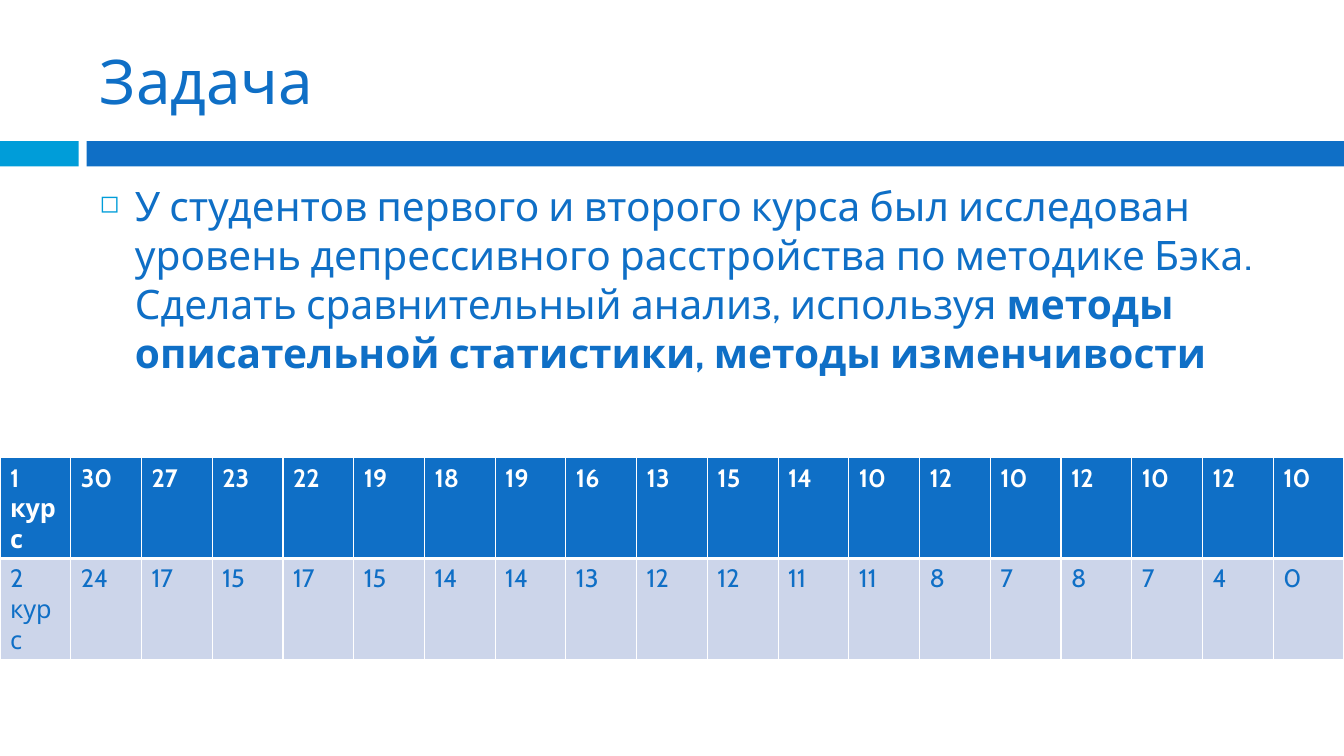
from lxml.etree import SubElement
from pptx import Presentation
from pptx.dml.color import RGBColor
from pptx.enum.shapes import MSO_SHAPE
from pptx.enum.text import MSO_ANCHOR, PP_ALIGN
from pptx.oxml.ns import qn
from pptx.util import Inches, Pt

FONT = "Cabin"
BLUE, CYAN, PALE, WHITE = "0F6FC6", "009DD9", "CCD5EA", "FFFFFF"
TITLE = "Задача"
TASK = [
    ("У студентов первого и второго курса был исследован уровень "
     "депрессивного расстройства по методике Бэка. "
     "Сделать сравнительный анализ, используя ", False),
    ("методы описательной статистики, методы изменчивости", True),
]
ROWS = [
    ("1 курс", 30, 27, 23, 22, 19, 18, 19, 16, 13, 15, 14, 10, 12, 10, 12, 10, 12, 10),
    ("2 курс", 24, 17, 15, 17, 15, 14, 14, 13, 12, 12, 11, 11, 8, 7, 8, 7, 4, 0),
]
LOOKS = [(BLUE, WHITE, True, 3), (PALE, BLUE, False, 1)]
BARS = [(0, 0.78, CYAN), (0.86, 12.47, BLUE)]
WIDE, HIGH = 13.33, 7.5
LEFT, SPAN = 0.89, 11.89


def paint(fill, color):
    fill.solid()
    fill.fore_color.rgb = RGBColor.from_string(color)


def write(par, text, size=18, color=BLUE, bold=False):
    run = par.add_run()
    run.text = text
    font = run.font
    font.name, font.size, font.bold = FONT, Pt(size), bold
    font.color.rgb = RGBColor.from_string(color)


def place(shape, *box):
    shape.left, shape.top, shape.width, shape.height = map(Inches, box)


def bullet(par, sign, color, scale):
    props = par._p.get_or_add_pPr()
    props.set("marL", str(Inches(0.35)))
    props.set("indent", str(-Inches(0.35)))
    tint = SubElement(props, qn("a:buClr"))
    SubElement(tint, qn("a:srgbClr"), val=color)
    SubElement(props, qn("a:buSzPct"), val=str(scale * 1000))
    SubElement(props, qn("a:buChar"), char=sign)


def edge(cell, side, width):
    props = cell._tc.get_or_add_tcPr()
    line = SubElement(props, qn("a:" + side), w=str(Pt(width)))
    fill = SubElement(line, qn("a:solidFill"))
    SubElement(fill, qn("a:srgbClr"), val=WHITE)


def main():
    deck = Presentation()
    deck.slide_width, deck.slide_height = Inches(WIDE), Inches(HIGH)
    slide = deck.slides.add_slide(deck.slide_layouts[5])
    shapes = slide.shapes

    for left, width, color in BARS:
        bar = shapes.add_shape(MSO_SHAPE.RECTANGLE, Inches(left), Inches(1.4),
                               Inches(width), Inches(0.25))
        paint(bar.fill, color)
        bar.line.fill.background()
        bar.shadow.inherit = False

    title = shapes.title
    place(title, LEFT, 0.25, SPAN, 1.08)
    title.text_frame.vertical_anchor = MSO_ANCHOR.MIDDLE
    head = title.text_frame.paragraphs[0]
    head.alignment = PP_ALIGN.LEFT
    write(head, TITLE, size=44)

    body = shapes.add_textbox(0, 0, 0, 0)
    place(body, LEFT, 1.75, SPAN, 2.31)
    body.text_frame.word_wrap = True
    par = body.text_frame.paragraphs[0]
    bullet(par, "◻", CYAN, 60)
    for text, bold in TASK:
        write(par, text, size=29, bold=bold)

    count = len(ROWS[0])
    table = shapes.add_table(len(ROWS), count, 0, Inches(4.54),
                             Inches(WIDE), Inches(0.82)).table
    for col in table.columns:
        col.width = Inches(WIDE / count)
    for r, (row, look) in enumerate(zip(ROWS, LOOKS)):
        back, color, bold, base = look
        for c, value in enumerate(row):
            cell = table.cell(r, c)
            write(cell.text_frame.paragraphs[0], str(value), color=color, bold=bold)
            for side, width in (("lnL", 1), ("lnR", 1), ("lnT", LOOKS[r - 1][3] if r else 1), ("lnB", base)):
                edge(cell, side, width)
            paint(cell.fill, back)

    deck.save("out.pptx")


if __name__ == "__main__":
    main()
